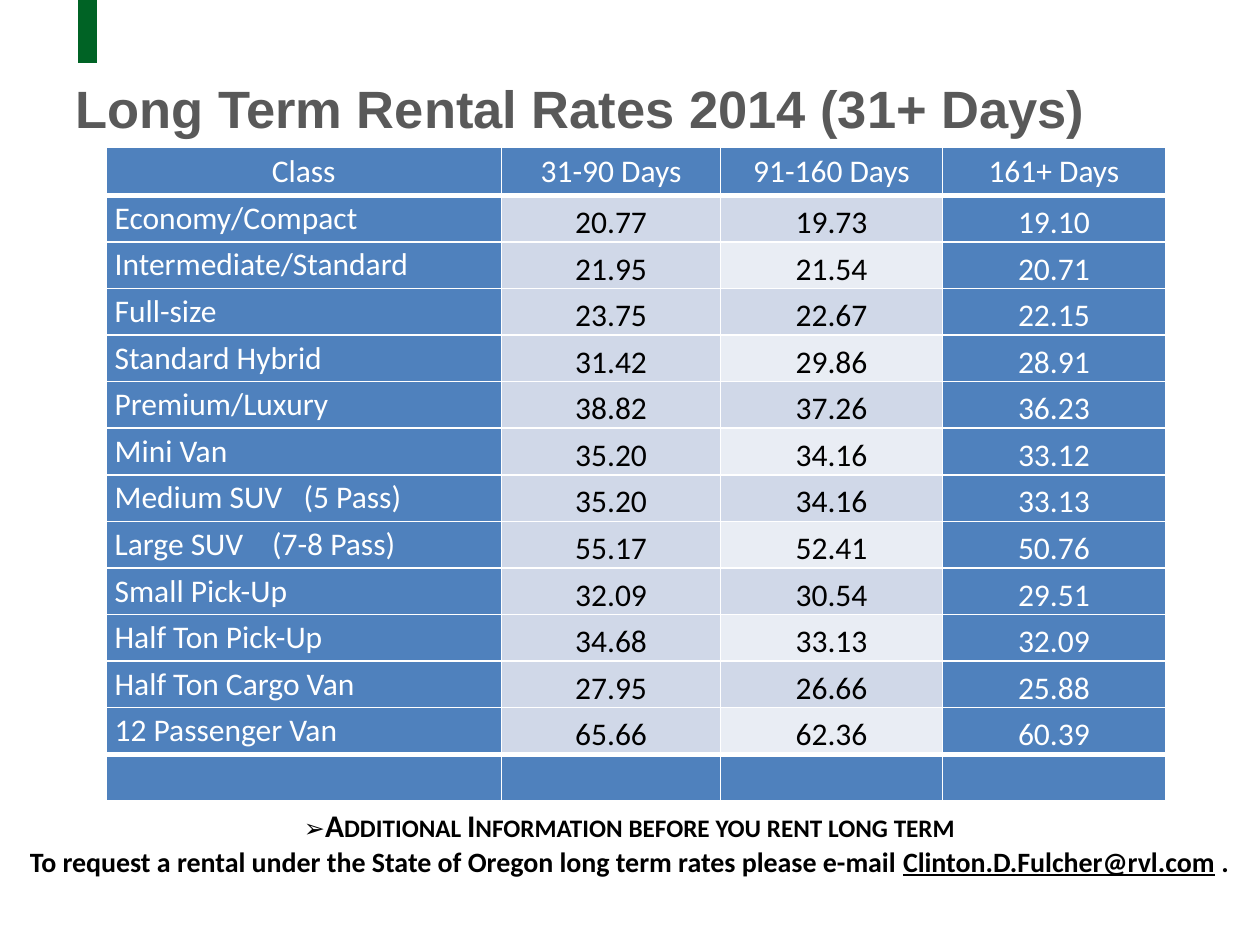
from dataclasses import dataclass
from typing import Optional

from lxml.etree import SubElement
from pptx import Presentation
from pptx.dml.color import RGBColor
from pptx.enum.shapes import MSO_SHAPE as Shape
from pptx.enum.text import MSO_ANCHOR as Anchor, PP_ALIGN as Align
from pptx.oxml.ns import qn
from pptx.util import Inches, Pt

WIDTH, HEIGHT = 10, 7.5
COLORS = {
    "green": "006325", "title": "595959", "blue": "4F81BD", "band": "D0D8E8",
    "light": "E9EDF4", "white": "FFFFFF", "black": "000000",
}
COLUMNS = [3.14, 1.74, 1.76, 1.77]
HEADER_HEIGHT, ROW_HEIGHT = 0.38, 0.37
HEADINGS = ["Class", "31-90 Days", "91-160 Days", "161+ Days"]
THIN, THICK = 1, 3


@dataclass
class Rate:
    vehicle: str
    prices: tuple[str, str, str]
    tab: Optional[float] = None


RATES = [
    Rate("Economy/Compact", ("20.77", "19.73", "19.10")),
    Rate("Intermediate/Standard", ("21.95", "21.54", "20.71")),
    Rate("Full-size", ("23.75", "22.67", "22.15")),
    Rate("Standard Hybrid", ("31.42", "29.86", "28.91")),
    Rate("Premium/Luxury", ("38.82", "37.26", "36.23")),
    Rate("Mini Van", ("35.20", "34.16", "33.12")),
    Rate("Medium SUV\t(5 Pass)", ("35.20", "34.16", "33.13"), tab=1.5),
    Rate("Large SUV\t(7-8 Pass)", ("55.17", "52.41", "50.76"), tab=1.25),
    Rate("Small Pick-Up", ("32.09", "30.54", "29.51")),
    Rate("Half Ton Pick-Up", ("34.68", "33.13", "32.09")),
    Rate("Half Ton Cargo Van", ("27.95", "26.66", "25.88")),
    Rate("12 Passenger Van", ("65.66", "62.36", "60.39")),
]


def rgb(color: str) -> RGBColor:
    return RGBColor.from_string(COLORS[color])


def set_font(font, color: str, **values) -> None:
    for name, value in values.items():
        setattr(font, name, value)
    font.color.rgb = rgb(color)


def add_tab(paragraph, inches: float) -> None:
    stops = SubElement(paragraph._p.get_or_add_pPr(), qn("a:tabLst"))
    SubElement(stops, qn("a:tab"), pos=str(Inches(inches)), algn="l")


def set_borders(cell, top: float, bottom: float) -> None:
    """Draw white cell borders; they must precede the cell's fill."""
    properties = cell._tc.get_or_add_tcPr()
    for side, points in {"L": THIN, "R": THIN, "T": top, "B": bottom}.items():
        line = SubElement(properties, qn(f"a:ln{side}"), w=str(Pt(points)))
        fill = SubElement(line, qn("a:solidFill"))
        SubElement(fill, qn("a:srgbClr"), val=COLORS["white"])


def fill_cell(cell, text: str, fill: str, color: str = "white",
              align=Align.CENTER, anchor=Anchor.MIDDLE, top: float = THIN,
              bottom: float = THIN, tab: Optional[float] = None) -> None:
    set_borders(cell, top, bottom)
    layout = {
        "margin_left": Inches(0.07), "margin_right": Inches(0.07),
        "margin_top": 0, "margin_bottom": 0, "vertical_anchor": anchor,
    }
    for name, value in layout.items():
        setattr(cell, name, value)
    cell.fill.solid()
    cell.fill.fore_color.rgb = rgb(fill)
    paragraph = cell.text_frame.paragraphs[0]
    paragraph.alignment = align
    if tab:
        add_tab(paragraph, tab)
    if text:
        run = paragraph.add_run()
        run.text = text
        set_font(run.font, color, name="Calibri", size=Pt(18))


def add_rates(slide) -> None:
    row_count = len(RATES) + 2
    table_height = HEADER_HEIGHT + ROW_HEIGHT * (row_count - 1)
    table = slide.shapes.add_table(
        row_count, len(COLUMNS), Inches(0.84), Inches(1.17),
        Inches(sum(COLUMNS)), Inches(table_height)).table
    for column, width in zip(table.columns, COLUMNS):
        column.width = Inches(width)
    for index, row in enumerate(table.rows):
        row.height = Inches(ROW_HEIGHT if index else HEADER_HEIGHT)

    for column, heading in enumerate(HEADINGS):
        fill_cell(table.cell(0, column), heading, "blue", bottom=THICK)
        fill_cell(table.cell(row_count - 1, column), "", "blue", top=THICK)
    for row, rate in enumerate(RATES, start=1):
        fill_cell(table.cell(row, 0), rate.vehicle, "blue",
                  align=Align.LEFT, tab=rate.tab)
        middle_fill = "band" if row % 2 else "light"
        styles = [("band", "black"), (middle_fill, "black"), ("blue", "white")]
        for column, (price, style) in enumerate(zip(rate.prices, styles), start=1):
            fill_cell(table.cell(row, column), price, *style, anchor=Anchor.BOTTOM)


def add_text_frame(slide, left: float, top: float, width: float, height: float):
    frame = slide.shapes.add_textbox(
        Inches(left), Inches(top), Inches(width), Inches(height)).text_frame
    frame.word_wrap = True
    return frame


def add_title(slide) -> None:
    frame = add_text_frame(slide, 0.5, 0.51, 8.65, 0.75)
    frame.vertical_anchor = Anchor.MIDDLE
    paragraph = frame.paragraphs[0]
    paragraph.line_spacing = 0.9
    run = paragraph.add_run()
    run.text = "Long Term Rental Rates 2014 (31+ Days)"
    set_font(run.font, "title", name="Arial", size=Pt(30), bold=True)


def add_contact(slide) -> None:
    frame = add_text_frame(slide, 0.08, 6.35, 9.83, 0.67)
    notice, request = frame.paragraphs[0], frame.add_paragraph()
    parts = [
        (notice, "➢Additional Information before you rent long term", 18, False),
        (request, "To request a rental under the State of Oregon long term rates "
                  "please e-mail ", 16, False),
        (request, "Clinton.D.Fulcher@rvl.com", 16, True),
        (request, " .", 16, False),
    ]
    for paragraph, text, size, underline in parts:
        paragraph.alignment = Align.CENTER
        run = paragraph.add_run()
        run.text = text
        set_font(run.font, "black", name="Calibri", size=Pt(size), bold=True,
                 underline=underline)
        if paragraph is notice:
            run._r.get_or_add_rPr().set("cap", "small")


def add_accent(slide) -> None:
    accent = slide.shapes.add_shape(
        Shape.RECTANGLE, Inches(0.62), 0, Inches(0.15), Inches(HEIGHT / 15))
    accent.shadow.inherit = False
    accent.fill.solid()
    accent.fill.fore_color.rgb = rgb("green")
    accent.line.fill.background()


def main() -> None:
    deck = Presentation()
    deck.slide_width, deck.slide_height = Inches(WIDTH), Inches(HEIGHT)
    slide = deck.slides.add_slide(deck.slide_layouts[6])
    add_accent(slide)
    add_title(slide)
    add_rates(slide)
    add_contact(slide)
    deck.save("out.pptx")


if __name__ == "__main__":
    main()
